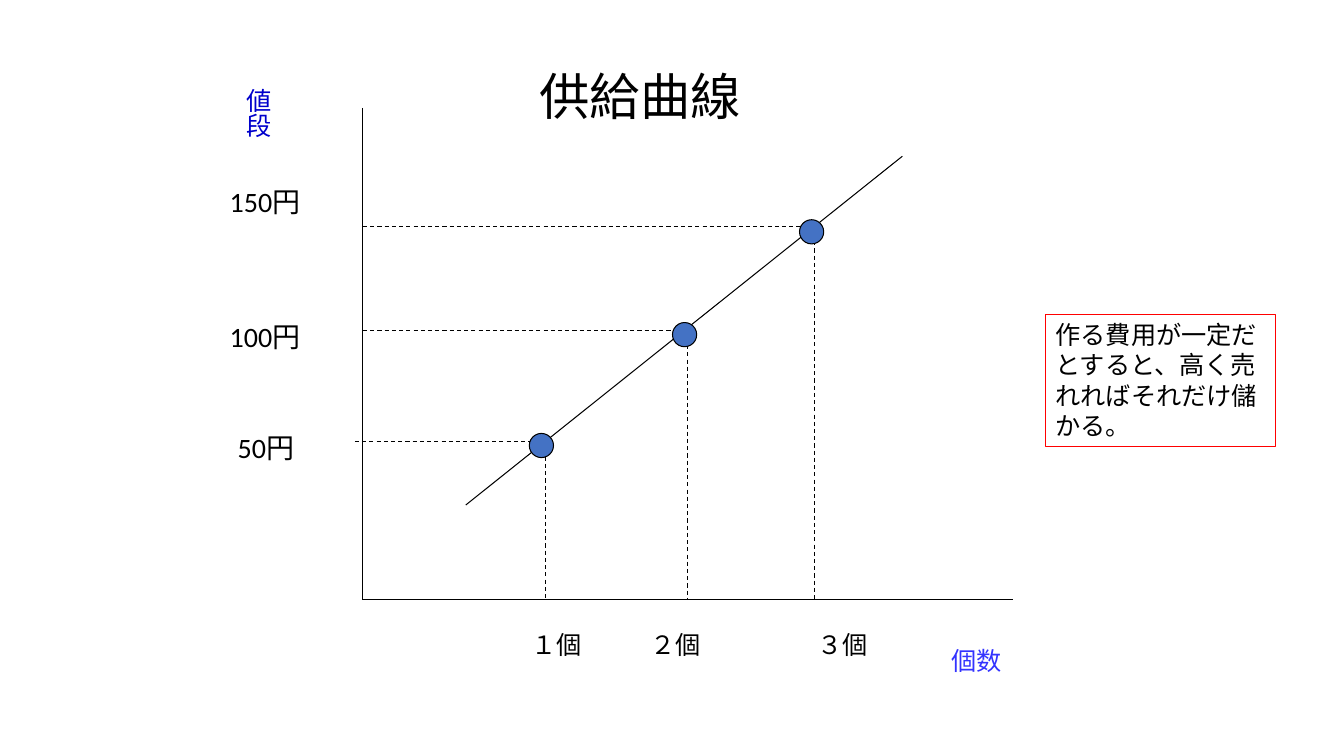
"""Build a slide with a supply curve: price against quantity."""
from lxml import etree
from pptx import Presentation
from pptx.dml.color import RGBColor
from pptx.enum.dml import MSO_LINE
from pptx.enum.shapes import MSO_CONNECTOR, MSO_SHAPE
from pptx.enum.text import MSO_ANCHOR, PP_ALIGN
from pptx.oxml.ns import qn
from pptx.util import Inches, Pt

STRAIGHT = MSO_CONNECTOR.STRAIGHT
OVAL, RECTANGLE = MSO_SHAPE.OVAL, MSO_SHAPE.RECTANGLE
DASH, TOP, LEFT = MSO_LINE.DASH, MSO_ANCHOR.TOP, PP_ALIGN.LEFT

COLORS = {"ink": "000000", "price": "0000CC", "quantity": "3333FF",
          "dot": "4472C4", "note": "FF0000"}
FONT = "Calibri"
LINE_WIDTH = Pt(0.75)
DOT_SIZE = 0.24

TITLE = ("供給曲線", (5.25, 0.6, 2.6, 0.7), 36, "ink")
NOTE = ("作る費用が一定だとすると、高く売れればそれだけ儲かる。",
        (10.37, 3.12, 2.28, 1.31), 18, "ink")
PRICE_AXIS = ("値段", (2.26, 0.78, 0.5, 1.73), 18, "price")
LABELS = [
    ("個数", (9.34, 6.35, 1.73, 0.4), 18, "quantity"),
    ("１個", (5.17, 6.19, 1.02, 0.4), 18, "ink"),
    ("２個", (6.35, 6.19, 1.18, 0.4), 18, "ink"),
    ("３個", (8.01, 6.19, 1.02, 0.4), 18, "ink"),
    ("50円", (2.26, 4.22, 1.34, 0.43), 20, "ink"),
    ("100円", (2.18, 3.12, 1.18, 0.43), 20, "ink"),
    ("150円", (2.18, 1.78, 1.18, 0.43), 20, "ink"),
]

ORIGIN_X, ORIGIN_Y = 3.6, 5.95
AXES_AND_CURVE = [
    (ORIGIN_X, 1.07, ORIGIN_X, ORIGIN_Y),
    (ORIGIN_X, ORIGIN_Y, 10.05, ORIGIN_Y),
    (4.62, 5.01, 8.95, 1.55),
]
SUPPLY_POINTS = [
    {"guide": (5.41, 4.38), "start_x": 3.52, "drop_y": 4.46, "dot": (5.25, 4.3)},
    {"guide": (6.82, 3.28), "start_x": ORIGIN_X, "drop_y": 3.28, "dot": (6.67, 3.2)},
    {"guide": (8.08, 2.25), "start_x": ORIGIN_X, "drop_y": 2.25, "dot": (7.93, 2.18)},
]


def rgb(name):
    return RGBColor.from_string(COLORS[name])


def inches(values):
    return [Inches(value) for value in values]


def write(shape, text, size, color):
    frame = shape.text_frame
    frame.text = text
    for name, value in {"word_wrap": True, "vertical_anchor": TOP}.items():
        setattr(frame, name, value)
    paragraph = frame.paragraphs[0]
    paragraph.alignment = LEFT
    font = paragraph.runs[0].font
    for name, value in {"name": FONT, "size": Pt(size), "bold": False}.items():
        setattr(font, name, value)
    font.color.rgb = rgb(color)


def add_label(slide, text, box, size, color):
    label = slide.shapes.add_textbox(*inches(box))
    write(label, text, size, color)
    return label


def add_line(slide, ends, dash=None):
    connector = slide.shapes.add_connector(STRAIGHT, *inches(ends))
    connector.line.width = LINE_WIDTH
    connector.line.color.rgb = rgb("ink")
    if dash:
        connector.line.dash_style = dash
    etree.SubElement(connector._element.spPr, qn("a:effectLst"))


def add_outlined(slide, kind, box, line_color):
    shape = slide.shapes.add_shape(kind, *inches(box))
    shape.shadow.inherit = False
    shape.line.width = LINE_WIDTH
    shape.line.color.rgb = rgb(line_color)
    return shape


def main():
    deck = Presentation()
    deck.slide_width, deck.slide_height = Inches(13.33), Inches(7.5)
    slide = deck.slides.add_slide(deck.slide_layouts[5])

    title_text, title_box, title_size, title_color = TITLE
    title = slide.shapes.title
    for name, value in zip(("left", "top", "width", "height"), inches(title_box)):
        setattr(title, name, value)
    write(title, title_text, title_size, title_color)

    for ends in AXES_AND_CURVE:
        add_line(slide, ends)
    for point in SUPPLY_POINTS:
        x, y = point["guide"]
        add_line(slide, (point["start_x"], y, x, y), DASH)
        add_line(slide, (x, point["drop_y"], x, ORIGIN_Y), DASH)

    for label in LABELS:
        add_label(slide, *label)
    price_axis = add_label(slide, *PRICE_AXIS)
    price_axis.text_frame._txBody.bodyPr.set("vert", "eaVert")

    for point in SUPPLY_POINTS:
        dot = add_outlined(slide, OVAL, (*point["dot"], DOT_SIZE, DOT_SIZE), "ink")
        dot.fill.solid()
        dot.fill.fore_color.rgb = rgb("dot")

    note_text, note_box, note_size, note_color = NOTE
    note = add_outlined(slide, RECTANGLE, note_box, "note")
    note.fill.background()
    write(note, note_text, note_size, note_color)

    deck.save("out.pptx")


if __name__ == "__main__":
    main()
